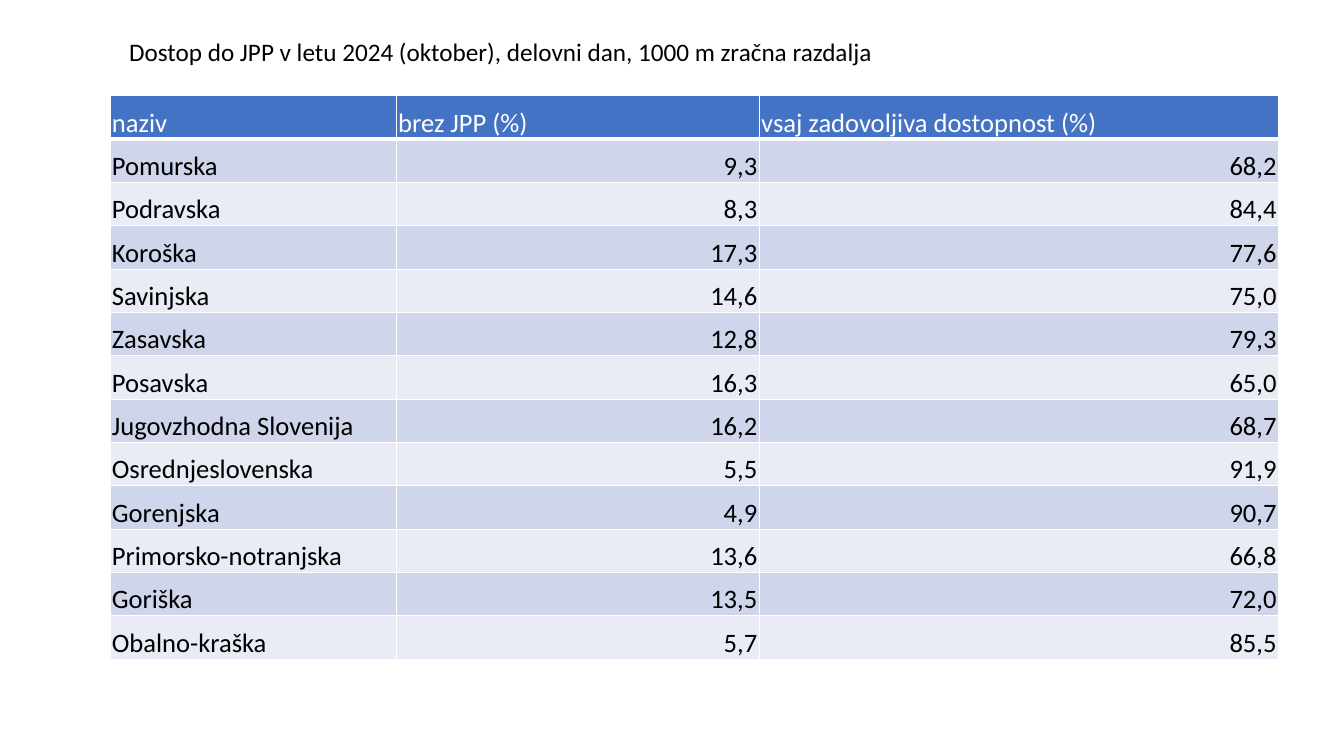
from lxml.etree import SubElement
from pptx import Presentation
from pptx.dml.color import RGBColor
from pptx.enum.text import MSO_ANCHOR, MSO_AUTO_SIZE, PP_ALIGN
from pptx.oxml.ns import qn
from pptx.util import Inches, Pt

HEADS = ["naziv", "brez JPP (%)", "vsaj zadovoljiva dostopnost (%)"]
DATA = [
    ("Pomurska", "9,3", "68,2"),
    ("Podravska", "8,3", "84,4"),
    ("Koroška", "17,3", "77,6"),
    ("Savinjska", "14,6", "75,0"),
    ("Zasavska", "12,8", "79,3"),
    ("Posavska", "16,3", "65,0"),
    ("Jugovzhodna Slovenija", "16,2", "68,7"),
    ("Osrednjeslovenska", "5,5", "91,9"),
    ("Gorenjska", "4,9", "90,7"),
    ("Primorsko-notranjska", "13,6", "66,8"),
    ("Goriška", "13,5", "72,0"),
    ("Obalno-kraška", "5,7", "85,5"),
]
WIDTHS = [2.84, 3.6, 5.15]
HEIGHT = 0.43
BANDS = ["E9EBF5", "CFD5EA"]


def color(code):
    return RGBColor.from_string(code)


def apply(item, values):
    for name, value in values.items():
        setattr(item, name, value)


class Deck:
    font = "Calibri"
    inset = {
        "margin_left": Inches(0.02),
        "margin_right": Inches(0.02),
        "margin_top": Inches(0.02),
        "margin_bottom": 0,
        "vertical_anchor": MSO_ANCHOR.BOTTOM,
    }

    def __init__(self, show):
        self.slide = show.slides.add_slide(show.slide_layouts[5])

    def label(self, frame, text, size, ink, align=PP_ALIGN.LEFT):
        par = frame.paragraphs[0]
        par.alignment = align
        run = par.add_run()
        run.text = text
        apply(run.font, {"name": self.font, "size": Pt(size)})
        run.font.color.rgb = color(ink)

    def title(self, text, left, top, width, height):
        box = self.slide.shapes.title
        apply(box, {"left": Inches(left), "top": Inches(top),
                    "width": Inches(width), "height": Inches(height)})
        apply(box.text_frame, {"word_wrap": True,
                               "vertical_anchor": MSO_ANCHOR.TOP,
                               "auto_size": MSO_AUTO_SIZE.SHAPE_TO_FIT_TEXT})
        self.label(box.text_frame, text, 18, "000000")

    def border(self, cell, base):
        props = cell._tc.get_or_add_tcPr()
        for side, points in {"L": 1, "R": 1, "T": 1, "B": base}.items():
            line = SubElement(props, qn(f"a:ln{side}"), w=str(Pt(points)))
            fill = SubElement(line, qn("a:solidFill"))
            SubElement(fill, qn("a:srgbClr"), val="FFFFFF")

    def cell(self, cell, text, fill, ink, align, base):
        apply(cell, self.inset)
        self.border(cell, base)
        cell.fill.solid()
        cell.fill.fore_color.rgb = color(fill)
        self.label(cell.text_frame, text, 19, ink, align)

    def table(self, rows, widths, height, left, top):
        grid = self.slide.shapes.add_table(
            len(rows), len(widths), Inches(left), Inches(top),
            Inches(sum(widths)), Inches(height * len(rows))).table
        for col, width in zip(grid.columns, widths):
            col.width = Inches(width)
        for r, row in enumerate(rows):
            grid.rows[r].height = Inches(height)
            head = r == 0
            fill = "4472C4" if head else BANDS[r % 2]
            ink = "FFFFFF" if head else "000000"
            for c, text in enumerate(row):
                align = PP_ALIGN.LEFT if head or c == 0 else PP_ALIGN.RIGHT
                self.cell(grid.cell(r, c), text, fill, ink, align,
                          3 if head else 1)


def main():
    show = Presentation()
    apply(show, {"slide_width": Inches(13.33), "slide_height": Inches(7.5)})
    deck = Deck(show)

    # Heading
    deck.title("Dostop do JPP v letu 2024 (oktober), delovni dan, "
               "1000 m zračna razdalja", 1.18, 0.31, 11.44, 0.4)

    # Access by region
    deck.table([HEADS, *DATA], WIDTHS, HEIGHT, 1.09, 0.95)

    show.save("out.pptx")


if __name__ == "__main__":
    main()
